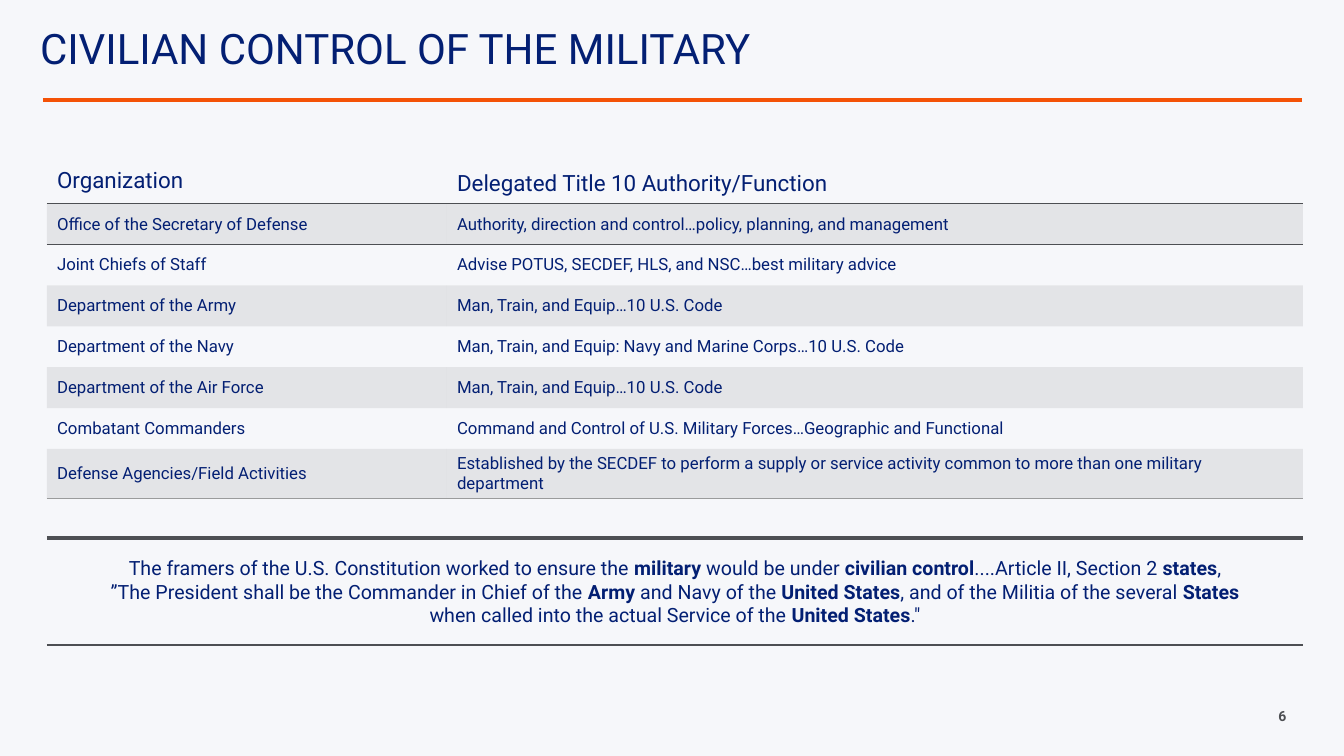
"""Build the slide on civilian control of the military."""
from lxml import etree
from pptx import Presentation
from pptx.dml.color import RGBColor
from pptx.enum.shapes import MSO_CONNECTOR
from pptx.enum.text import MSO_ANCHOR, MSO_AUTO_SIZE, PP_ALIGN
from pptx.oxml.ns import qn
from pptx.util import Pt

TITLE = "CIVILIAN CONTROL OF THE MILITARY"
ROWS = [
    ("Organization", "Delegated Title 10 Authority/Function"),
    ("Office of the Secretary of Defense", "Authority, direction and control…policy, planning, and management"),
    ("Joint Chiefs of Staff", "Advise POTUS, SECDEF, HLS, and NSC…best military advice"),
    ("Department of the Army", "Man, Train, and Equip…10 U.S. Code"),
    ("Department of the Navy", "Man, Train, and Equip: Navy and Marine Corps…10 U.S. Code"),
    ("Department of the Air Force", "Man, Train, and Equip…10 U.S. Code"),
    ("Combatant Commanders", "Command and Control of U.S. Military Forces…Geographic and Functional"),
    ("Defense Agencies/Field Activities",
     "Established by the SECDEF to perform a supply or service activity "
     "common to more than one military department"),
]
QUOTE = [
    "The framers of the U.S. Constitution worked to ensure the **military** would be under "
    "**civilian control**....Article II, Section 2 **states**,",
    "”The President shall be the Commander in Chief of the **Army** and Navy of the "
    "**United States**, and of the Militia of the several **States**",
    "when called into the actual Service of the **United States**.\"",
]
PAGE_NUMBER = "6"

NAVY = RGBColor(0x03, 0x1F, 0x73)
ORANGE = RGBColor(0xF4, 0x52, 0x06)
DARK_GRAY = RGBColor(0x4D, 0x4F, 0x53)
BAND_GRAY = RGBColor(0x9A, 0x9B, 0x9C)
PAPER = RGBColor(0xF6, 0xF7, 0xFA)
FONT = "Roboto"
PLAIN_TABLE_STYLE = "{2D5ABB26-0587-4C30-8999-92F81FD0307C}"

LEFT, CENTER = PP_ALIGN.LEFT, PP_ALIGN.CENTER
TOP, MIDDLE = MSO_ANCHOR.TOP, MSO_ANCHOR.MIDDLE
NO_FIT = MSO_AUTO_SIZE.NONE
STRAIGHT = MSO_CONNECTOR.STRAIGHT

SLIDE_WIDTH, SLIDE_HEIGHT = 1344, 756
EDGE, CONTENT_WIDTH = 47, 1256
TABLE_TOP, TABLE_HEIGHT = 163, 327
COLUMN_WIDTHS = (400, 856)
RULES = [
    (43, 1302, 100, ORANGE, 2.25),
    (EDGE, EDGE + CONTENT_WIDTH, 538, DARK_GRAY, 2.25),
    (EDGE, EDGE + CONTENT_WIDTH, 645, DARK_GRAY, 1),
]


def px(length):
    """Turn px into EMU."""
    return round(length * 914400 / 100.8)


def write(frame, lines, size=12, color=NAVY, bold=False, align=LEFT, spacing=None):
    """Fill a text frame with one paragraph; ** marks bold words."""
    para = frame.paragraphs[0]
    para.alignment = align
    para.line_spacing = spacing
    for number, line in enumerate(lines):
        if number:
            para.add_line_break()
        for index, piece in enumerate(line.split("**")):
            if piece:
                span = para.add_run()
                span.text = piece
                span.font.name = FONT
                span.font.size = Pt(size)
                span.font.color.rgb = color
                span.font.bold = bold or index % 2 == 1


def add_text(page, box, lines, wrap=True, **style):
    """Add a text box."""
    frame = page.shapes.add_textbox(*map(px, box)).text_frame
    frame.word_wrap = wrap
    write(frame, lines, **style)


def add_rule(page, left, right, y, color, width):
    """Add a horizontal line."""
    rule = page.shapes.add_connector(STRAIGHT, px(left), px(y), px(right), px(y))
    rule.line.color.rgb = color
    rule.line.width = Pt(width)
    etree.SubElement(rule._element.spPr, qn("a:effectLst"))


def add_border(cell, side, color):
    """Draw a one point border on one side of a cell."""
    border = etree.Element(qn(f"a:{side}"), w=str(Pt(1)))
    fill = etree.SubElement(border, qn("a:solidFill"))
    etree.SubElement(fill, qn("a:srgbClr"), val=str(color))
    cell._tc.get_or_add_tcPr().insert(0, border)


def shade(cell):
    """Give a cell the translucent band fill."""
    cell.fill.solid()
    cell.fill.fore_color.rgb = BAND_GRAY
    tint = cell._tc.tcPr.find(".//" + qn("a:srgbClr"))
    etree.SubElement(tint, qn("a:alpha"), val="20000")


def add_authority_table(page):
    """Add the table of organizations and their authority."""
    table = page.shapes.add_table(
        len(ROWS), len(COLUMN_WIDTHS), px(EDGE), px(TABLE_TOP), px(CONTENT_WIDTH), px(TABLE_HEIGHT)
    ).table
    table._tbl.tblPr.find(qn("a:tableStyleId")).text = PLAIN_TABLE_STYLE
    table.horz_banding = False
    for column, width in zip(table.columns, COLUMN_WIDTHS):
        column.width = px(width)
    for row_index, texts in enumerate(ROWS):
        table.rows[row_index].height = px(TABLE_HEIGHT / len(ROWS))
        for column_index, text in enumerate(texts):
            cell = table.cell(row_index, column_index)
            is_header = row_index == 0
            cell.vertical_anchor = TOP if is_header and column_index == 0 else MIDDLE
            write(cell.text_frame, [text], size=16 if is_header else 12)
            if row_index % 2:
                shade(cell)
            else:
                cell.fill.background()
            if is_header:
                add_border(cell, "lnB", DARK_GRAY)
            elif row_index == 1:
                add_border(cell, "lnT", DARK_GRAY)
            elif row_index == len(ROWS) - 1:
                add_border(cell, "lnB", BAND_GRAY)


def add_title(page):
    """Place and format the title."""
    title = page.shapes.title
    title.left, title.top, title.width, title.height = map(px, (40, 0, 1237, 105))
    frame = title.text_frame
    frame.auto_size = NO_FIT
    frame.vertical_anchor = MIDDLE
    frame.margin_left, frame.margin_right = 0, px(20)
    frame.margin_top = frame.margin_bottom = px(10)
    write(frame, [TITLE], size=30, spacing=0.8)


def main():
    """Build and save the deck."""
    deck = Presentation()
    deck.slide_width, deck.slide_height = px(SLIDE_WIDTH), px(SLIDE_HEIGHT)
    page = deck.slides.add_slide(deck.slide_layouts[5])
    page.background.fill.solid()
    page.background.fill.fore_color.rgb = PAPER
    add_title(page)
    add_authority_table(page)
    add_text(page, (EDGE, 551, CONTENT_WIDTH, 82), QUOTE, size=14, align=CENTER)
    for rule in RULES:
        add_rule(page, *rule)
    add_text(page, (1264, 703, 37, 27), [PAGE_NUMBER], wrap=False,
             size=10, color=DARK_GRAY, bold=True, align=CENTER)
    deck.save("out.pptx")


if __name__ == "__main__":
    main()
